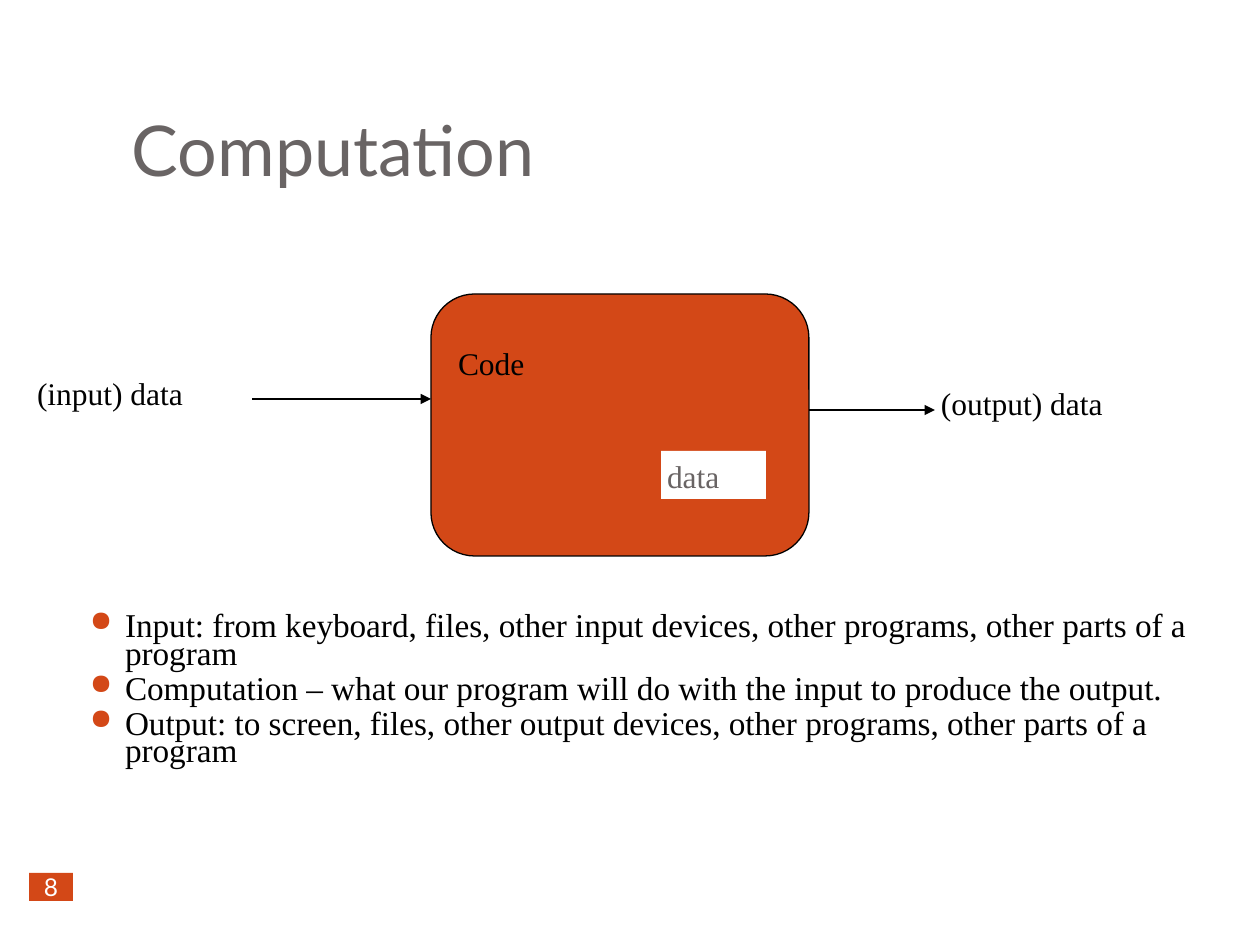
from dataclasses import dataclass
from typing import Optional

from lxml.etree import SubElement
from pptx import Presentation
from pptx.dml.color import RGBColor
from pptx.enum.shapes import MSO_CONNECTOR, MSO_SHAPE
from pptx.enum.text import MSO_ANCHOR, PP_ALIGN
from pptx.oxml.ns import qn
from pptx.util import Emu, Pt

PX_PER_INCH = 126


@dataclass(frozen=True)
class Theme:
    accent: str = "D34817"
    ink: str = "000000"
    muted: str = "696464"
    paper: str = "FFFFFF"
    sans: str = "Lato"
    serif: str = "Times New Roman"
    title: int = 40
    body: int = 19
    label: int = 18
    number: int = 14
    line: float = 0.75


T = Theme()


@dataclass(frozen=True)
class Box:
    x: int
    y: int
    w: int
    h: int


@dataclass(frozen=True)
class Text:
    lines: tuple
    size: int = T.label
    font: str = T.serif
    color: str = T.ink
    anchor: MSO_ANCHOR = MSO_ANCHOR.TOP
    align: PP_ALIGN = PP_ALIGN.LEFT
    inset: int = 6
    bullets: bool = False


@dataclass(frozen=True)
class Block:
    box: Box
    text: Optional[Text] = None
    fill: Optional[str] = None
    line: Optional[str] = None
    shape: MSO_SHAPE = MSO_SHAPE.RECTANGLE


@dataclass(frozen=True)
class Arrow:
    x1: int
    x2: int
    y: int


def px(n: int) -> Emu:
    return Emu(round(n * 914400 / PX_PER_INCH))


def rgb(color: str) -> RGBColor:
    return RGBColor.from_string(color)


def add_bullet(p) -> None:
    p.line_spacing = 0.7
    p.space_before = Pt(4)
    pPr = p._p.get_or_add_pPr()
    pPr.set("marL", str(px(35)))
    pPr.set("indent", str(-px(35)))
    clr = SubElement(pPr, qn("a:buClr"))
    SubElement(clr, qn("a:srgbClr"), val=T.accent)
    SubElement(pPr, qn("a:buSzPct"), val="85000")
    SubElement(pPr, qn("a:buChar"), char="●")


def write(tf, text: Text) -> None:
    tf.word_wrap = True
    tf.vertical_anchor = text.anchor
    tf.margin_left = tf.margin_right = px(text.inset)
    tf.margin_top = tf.margin_bottom = px(text.inset)
    tf.text = "\n".join(text.lines)
    for p in tf.paragraphs:
        p.alignment = text.align
        if text.bullets:
            add_bullet(p)
        for r in p.runs:
            r.font.size = Pt(text.size)
            r.font.name = text.font
            r.font.color.rgb = rgb(text.color)


def add_block(s, block: Block) -> None:
    b = block.box
    frame = px(b.x), px(b.y), px(b.w), px(b.h)
    if block.fill:
        sp = s.shapes.add_shape(block.shape, *frame)
        sp.shadow.inherit = False
        sp.fill.solid()
        sp.fill.fore_color.rgb = rgb(block.fill)
        if block.line:
            sp.line.color.rgb = rgb(block.line)
            sp.line.width = Pt(T.line)
        else:
            sp.line.fill.background()
    else:
        sp = s.shapes.add_textbox(*frame)
    if block.text:
        write(sp.text_frame, block.text)


def add_arrow(s, arrow: Arrow) -> None:
    y = px(arrow.y)
    cxn = s.shapes.add_connector(
        MSO_CONNECTOR.STRAIGHT, px(arrow.x1), y, px(arrow.x2), y)
    cxn.line.color.rgb = rgb(T.ink)
    cxn.line.width = Pt(T.line)
    SubElement(cxn.line._get_or_add_ln(), qn("a:tailEnd"), type="triangle")
    SubElement(cxn._element.spPr, qn("a:effectLst"))


BULLETS = (
    "Input: from keyboard, files, other input devices, other programs, "
    "other parts of a program",
    "Computation – what our program will do with the input to produce "
    "the output.",
    "Output: to screen, files, other output devices, other programs, "
    "other parts of a program",
)

BLOCKS = (
    Block(Box(126, 38, 1071, 158),
          Text(("Computation",), T.title, T.sans, T.muted, MSO_ANCHOR.BOTTOM)),
    Block(Box(84, 609, 1113, 199), Text(BULLETS, T.body, bullets=True)),
    Block(Box(431, 294, 378, 262), fill=T.accent, line=T.ink,
          shape=MSO_SHAPE.ROUNDED_RECTANGLE),
    Block(Box(31, 368, 231, 48), Text(("(input) data",))),
    Block(Box(935, 378, 242, 48), Text(("(output) data",))),
    Block(Box(661, 451, 105, 48), Text(("data",), color=T.muted), T.paper),
    Block(Box(452, 338, 144, 50), Text(("Code",))),
    Block(Box(29, 873, 44, 28),
          Text(("8",), T.number, T.sans, T.paper, MSO_ANCHOR.MIDDLE,
               PP_ALIGN.CENTER, 0), T.accent),
)

ARROWS = (Arrow(252, 431, 399), Arrow(809, 935, 410))


def main() -> None:
    prs = Presentation()
    prs.slide_width, prs.slide_height = px(1260), px(945)
    s = prs.slides.add_slide(prs.slide_layouts[6])
    for block in BLOCKS:
        add_block(s, block)
    for arrow in ARROWS:
        add_arrow(s, arrow)
    prs.save("out.pptx")


if __name__ == "__main__":
    main()
